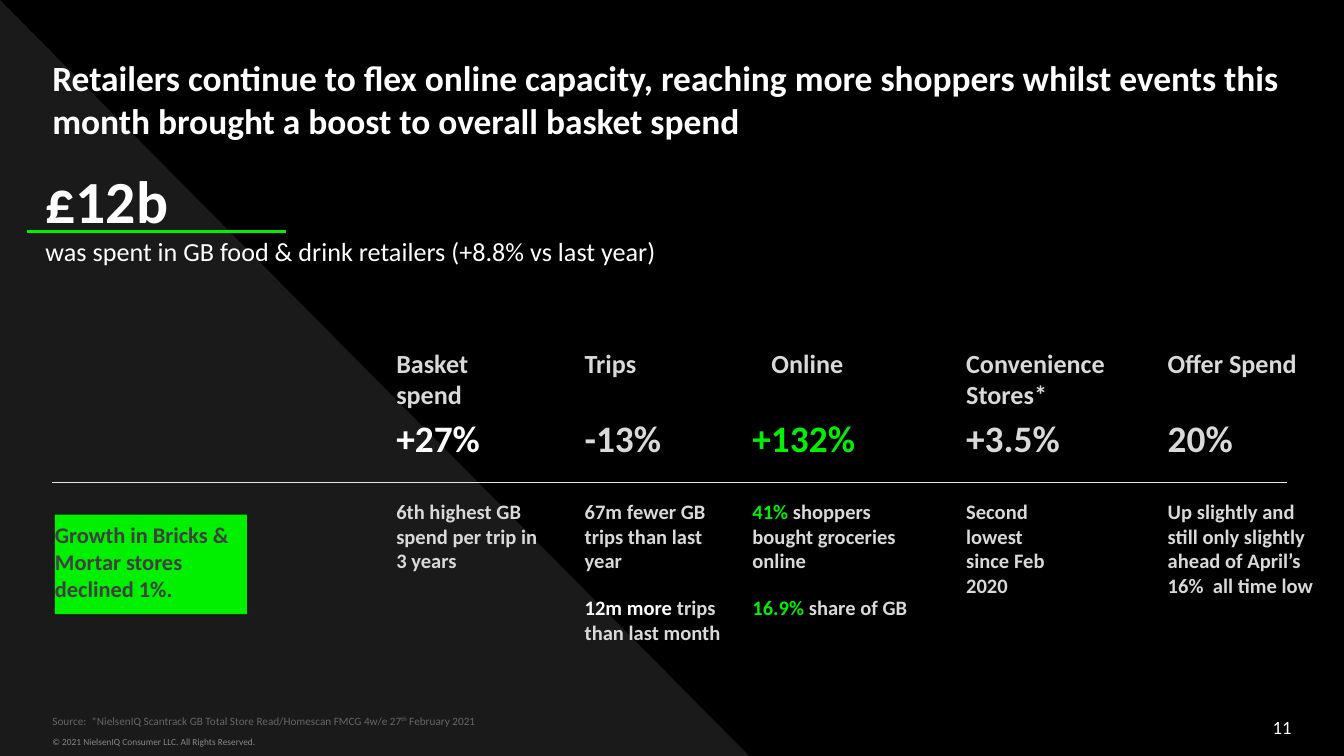
from dataclasses import dataclass

from pptx import Presentation
from pptx.dml.color import RGBColor
from pptx.enum.shapes import MSO_CONNECTOR as Line, MSO_SHAPE as Preset
from pptx.enum.text import MSO_ANCHOR as Anchor, MSO_AUTO_SIZE as Fit, PP_ALIGN as Align
from pptx.oxml.ns import qn
from pptx.util import Cm, Pt


@dataclass(frozen=True)
class Theme:
    font: str = "Calibri"
    black: str = "000000"
    panel: str = "1A1A1A"
    white: str = "FFFFFF"
    light: str = "D9D9D9"
    rule: str = "E5E5E5"
    green: str = "00F000"
    dark: str = "404040"
    source: str = "666666"
    legal: str = "888888"
    title: int = 19
    hero: int = 32
    lead: int = 14
    value: int = 20
    note: int = 11
    callout: int = 12
    number: int = 10
    small: int = 6
    tiny: int = 5


theme = Theme()

# Content: a paragraph is a list of (text, colour) spans
TITLE = ("Retailers continue to flex online capacity, reaching more shoppers "
         "whilst events this month brought a boost to overall basket spend")
HERO = "£12b"
LEAD = "was spent in GB food & drink retailers (+8.8% vs last year)"
CALLOUT = "Growth in Bricks & Mortar stores declined 1%."
SOURCE = ["Source:  *NielsenIQ Scantrack GB Total Store Read/Homescan FMCG 4w/e 27",
          "th", " February 2021"]
LEGAL = "© 2021 NielsenIQ Consumer LLC. All Rights Reserved."
PAGE_NUMBER = "11"

# Lengths in cm; widths are for heading, value and note
COLUMNS = [
    dict(left=7.49, widths=(1.9, 2.31, 2.84), heading="Basket spend",
         value=("+27%", theme.white), note_height=0.84,
         notes=[[("6th highest GB spend per trip in 3 years", theme.light)]]),
    dict(left=11.05, widths=(1.9, 2.31, 2.69), heading="Trips",
         value=("-13%", theme.light), note_height=3.53,
         notes=[[("67m fewer GB trips than last year", theme.light)],
                [("12m more ", theme.white), ("trips than last month", theme.light)]]),
    dict(left=14.22, widths=(1.9, 2.54, 3.23), heading="Online", heading_shift=0.36,
         value=("+132%", theme.green), note_height=2.51,
         notes=[[("41%", theme.green), (" shoppers bought groceries online", theme.light)],
                [("16.9%", theme.green), (" share of GB", theme.light)]]),
    dict(left=18.26, widths=(3.18, 2.92, 1.9), heading="Convenience Stores*",
         value=("+3.5%", theme.light), note_height=0.84,
         notes=[[("Second lowest since Feb 2020", theme.light)]]),
    dict(left=22.07, widths=(2.46, 2.46, 2.92), heading="Offer Spend",
         value=("20%", theme.light), note_height=1.07,
         notes=[[("Up slightly and still only slightly  ahead of April’s "
                  "16%  all time low", theme.light)]]),
]
HEADING_TOP, VALUE_TOP, NOTE_TOP = 6.43, 7.72, 9.3
ROW_HEIGHT = 0.84
MARGIN = 0.99


def rgb(colour):
    return RGBColor.from_string(colour)


def place(shape, left, top, width, height):
    shape.left, shape.top, shape.width, shape.height = map(Cm, (left, top, width, height))


def set_frame(shape, inset=0.13, anchor=Anchor.TOP):
    frame = shape.text_frame
    frame.word_wrap = True
    frame.auto_size = Fit.NONE
    frame.vertical_anchor = anchor
    frame.margin_left = frame.margin_right = 0
    frame.margin_top = frame.margin_bottom = Cm(inset)
    return frame


def add_span(para, text, size, colour, bold=False):
    span = para.add_run()
    span.text = text
    font = span.font
    font.name, font.size, font.bold = theme.font, Pt(size), bold
    font.color.rgb = rgb(colour)
    return span


def write(frame, paragraphs, size, bold=False, after=0, align=Align.LEFT):
    for index, spans in enumerate(paragraphs):
        para = frame.add_paragraph() if index else frame.paragraphs[0]
        para.alignment = align
        para.space_before, para.space_after = Pt(0), Pt(after)
        for text, colour in spans:
            add_span(para, text, size, colour, bold)


def add_text(page, area, paragraphs, size, anchor=Anchor.TOP, **style):
    box = page.shapes.add_textbox(*map(Cm, area))
    write(set_frame(box, anchor=anchor), paragraphs, size, **style)
    return box


def add_block(page, preset, area, colour):
    block = page.shapes.add_shape(preset, *map(Cm, area))
    block.shadow.inherit = False
    block.fill.solid()
    block.fill.fore_color.rgb = rgb(colour)
    block.line.fill.background()
    return block


def add_rule(page, left, right, top, colour, weight):
    rule = page.shapes.add_connector(Line.STRAIGHT, Cm(left), Cm(top), Cm(right), Cm(top))
    rule.line.color.rgb = rgb(colour)
    rule.line.width = Pt(weight)
    properties = rule._element.spPr
    properties.append(properties.makeelement(qn("a:effectLst"), {}))


def add_column(page, column):
    left = column["left"]
    heading_width, value_width, note_width = column["widths"]
    style = dict(bold=True, after=12)
    heading_left = left + column.get("heading_shift", 0)
    add_text(page, (heading_left, HEADING_TOP, heading_width, ROW_HEIGHT),
             [[(column["heading"], theme.light)]], theme.lead, **style)
    add_text(page, (left, VALUE_TOP, value_width, ROW_HEIGHT),
             [[column["value"]]], theme.value, **style)
    add_text(page, (left, NOTE_TOP, note_width, column["note_height"]),
             column["notes"], theme.note, **style)


def main():
    deck = Presentation()
    deck.slide_width, deck.slide_height = Cm(25.4), Cm(14.29)
    page = deck.slides.add_slide(deck.slide_layouts[0])
    title, source = page.placeholders

    # Background
    page.background.fill.solid()
    page.background.fill.fore_color.rgb = rgb(theme.black)
    panel = add_block(page, Preset.RIGHT_TRIANGLE, (0, 0, 14.2, 14.33), theme.panel)
    title._element.addprevious(panel._element)

    # Title
    place(title, MARGIN, 0.81, 23.42, 1.09)
    write(set_frame(title, 0.25), [[(TITLE, theme.white)]], theme.title, bold=True)

    # Source with a raised ordinal
    place(source, MARGIN, 13.49, 22.66, 0.51)
    write(set_frame(source, 0.25, Anchor.BOTTOM),
          [[(text, theme.source) for text in SOURCE]], theme.small)
    ordinal = source.text_frame.paragraphs[0].runs[1]
    ordinal._r.get_or_add_rPr().set("baseline", "30000")

    # Footer
    add_text(page, (MARGIN, 13.79, 14.07, 0.51), [[(LEGAL, theme.legal)]], theme.tiny)
    add_text(page, (18.69, 13.36, 5.72, 0.76), [[(PAGE_NUMBER, theme.white)]],
             theme.number, anchor=Anchor.MIDDLE, align=Align.RIGHT)

    # Headline figure
    hero = add_text(page, (0.86, 2.97, 18.8, 3.28), [[(HERO, theme.white)]],
                    theme.hero, bold=True)
    add_span(hero.text_frame.add_paragraph(), LEAD, theme.lead, theme.white)
    add_rule(page, 0.51, 5.41, 4.37, theme.green, 1.5)

    # Measures
    add_rule(page, MARGIN, 24.33, 9.12, theme.rule, 0.75)
    for column in COLUMNS:
        add_column(page, column)

    # Callout
    callout = add_block(page, Preset.RECTANGLE, (1.04, 9.73, 3.63, 1.88), theme.green)
    write(set_frame(callout), [[(CALLOUT, theme.dark)]], theme.callout, bold=True, after=12)

    deck.save("out.pptx")


if __name__ == "__main__":
    main()
